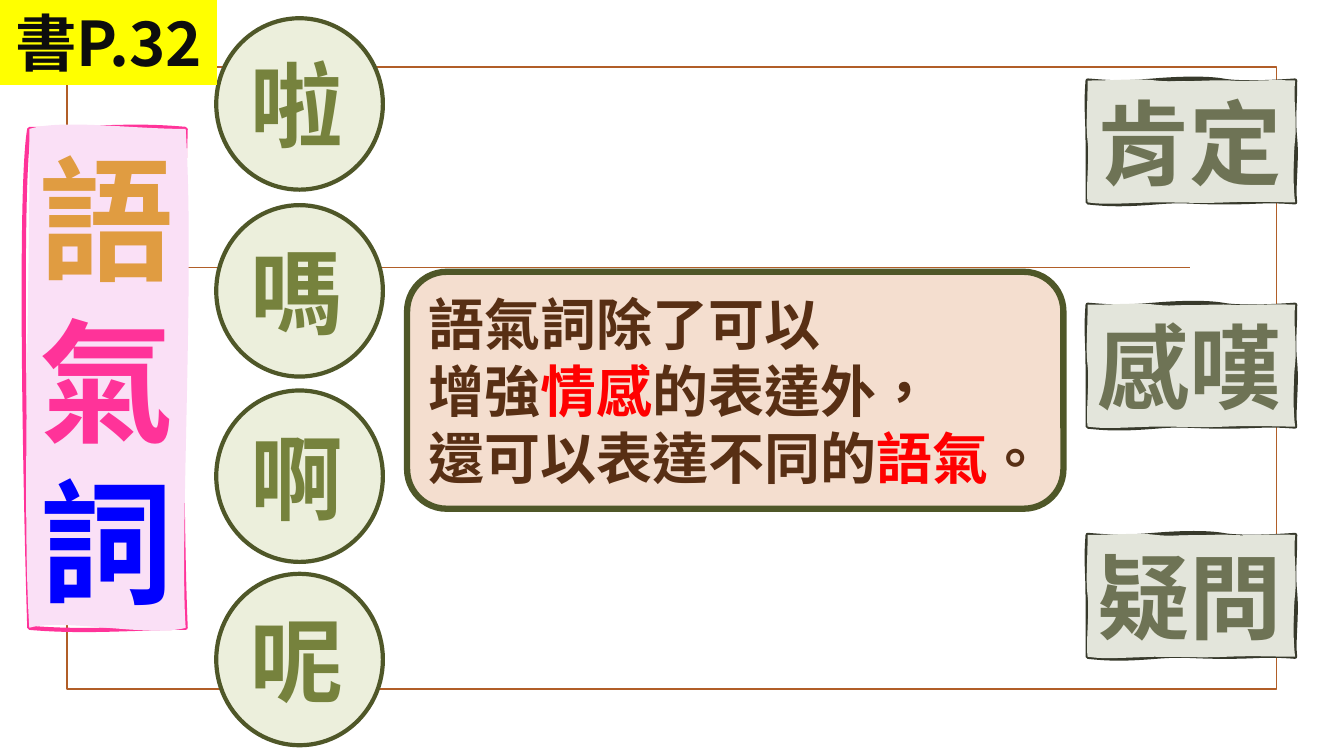
from pptx import Presentation
from pptx.dml.color import RGBColor
from pptx.enum.shapes import MSO_CONNECTOR, MSO_SHAPE
from pptx.enum.text import MSO_ANCHOR, PP_ALIGN
from pptx.oxml.ns import qn
from pptx.util import Cm, Pt
from lxml import etree

BANNER = [[("語", "ochre")], [("氣", "pink")], [("詞", "blue")]]
PARTICLES = [("啦", 0.46), ("嗎", 5.17), ("啊", 9.84), ("呢", 14.46)]
MOODS = [("肯定", 2.03), ("感嘆", 7.68), ("疑問", 13.48)]
CALLOUT = [
    [("語氣詞除了可以", "brown"), None,
     ("增強", "brown"), ("情感", "red"), ("的表達外，", "brown")],
    [("還可以表達不同的", "brown"), ("語氣", "red"), ("。", "brown")],
]
PAGE = [[("書P.32", "ink")]]

THEME = {
    "font": "Noto Sans CJK SC",
    "size": {"banner": 96, "tag": 66, "page": 44, "callout": 40},
    "color": {
        "rust": "B15E28", "ochre": "E09C41", "pink": "FF3399", "blue": "0000FF",
        "blush": "FAE0F6", "mist": "E3E5DB", "charcoal": "37392B", "sage": "6E7355",
        "lime": "ECEFDC", "moss": "4F5728", "olive": "76823D", "peach": "F4DECF",
        "brown": "582F14", "red": "FF0000", "yellow": "FFFF00", "ink": "0D0D0D",
    },
}

BANNER_EDGE = [
    ((.46, 0), (.64, -.01), (1, 0)), ((.96, .44), (.98, .86), (1, 1)),
    ((.68, 1), (.36, 1.01), (0, 1)), ((-.02, .81), (-.07, .12), (0, 0)),
]
BANNER_PAPER = [
    ((.21, -.02), (.65, 0), (1, 0)), ((1.06, .29), (.96, .82), (1, 1)),
    ((.78, 1.02), (.21, .98), (0, 1)), ((-.05, .77), (.01, .21), (0, 0)),
]
MOOD_EDGE = [
    ((.14, .02), (.17, .02), (.32, 0)), ((.46, -.02), (.58, -.02), (.65, 0)),
    ((.71, .02), (.84, .02), (1, 0)), ((1, .21), (.99, .3), (1, .48)),
    ((1.01, .66), (.99, .88), (1, 1)), ((.85, .98), (.83, 1), (.66, 1)),
    ((.49, 1), (.47, .98), (.33, 1)), ((.18, 1.02), (.11, 1.02), (0, 1)),
    ((0, .81), (0, .76), (0, .52)), ((0, .28), (-.01, .23), (0, 0)),
]
MOOD_PAPER = [
    ((.14, 0), (.24, -.02), (.33, 0)), ((.43, .02), (.61, -.01), (.69, 0)),
    ((.77, .01), (.85, -.01), (1, 0)), ((.99, .17), (1.01, .31), (1, .48)),
    ((.99, .64), (.99, .88), (1, 1)), ((.9, 1), (.81, .99), (.67, 1)),
    ((.53, 1.01), (.49, 1), (.32, 1)), ((.14, 1.01), (.08, 1.02), (0, 1)),
    ((-.01, .89), (.01, .64), (0, .5)), ((-.01, .36), (0, .21), (0, 0)),
]


def rgb(key):
    return RGBColor.from_string(THEME["color"][key])


def paint(shape, fill=None, line=None, width=0):
    shape.shadow.inherit = False
    if fill:
        shape.fill.solid()
        shape.fill.fore_color.rgb = rgb(fill)
    else:
        shape.fill.background()
    if line:
        shape.line.color.rgb = rgb(line)
        shape.line.width = Pt(width)
    else:
        shape.line.fill.background()
    return shape


def write(shape, paragraphs, role, align=PP_ALIGN.LEFT, wrap=True,
          anchor=MSO_ANCHOR.MIDDLE):
    frame = shape.text_frame
    for name, value in {"word_wrap": wrap, "vertical_anchor": anchor}.items():
        setattr(frame, name, value)
    for index, pieces in enumerate(paragraphs):
        paragraph = frame.add_paragraph() if index else frame.paragraphs[0]
        paragraph.alignment = align
        for piece in pieces:
            if piece is None:
                paragraph.add_line_break()
                continue
            run = paragraph.add_run()
            run.text, color = piece
            style = {"name": THEME["font"], "size": Pt(THEME["size"][role]), "bold": True}
            for name, value in style.items():
                setattr(run.font, name, value)
            run.font.color.rgb = rgb(color)
            run.font._element.set("lang", "zh-TW")
            east_asian = etree.SubElement(run.font._element, qn("a:ea"))
            east_asian.set("typeface", THEME["font"])


def preset(kind, box, **look):
    return paint(slide.shapes.add_shape(kind, *map(Cm, box)), **look)


def add_curves(outlines, curves, width, height, **mode):
    outline = etree.SubElement(outlines, qn("a:path"), w=str(width), h=str(height), **mode)

    def add_step(tag, points):
        step = etree.SubElement(outline, qn(tag))
        for x, y in points:
            etree.SubElement(step, qn("a:pt"), x=str(round(x * width)),
                             y=str(round(y * height)))

    add_step("a:moveTo", [(0, 0)])
    for curve in curves:
        add_step("a:cubicBezTo", curve)
    add_step("a:close", [])


def card(edge, paper, box, fill, line, paragraphs, role):
    left, top, width, height = map(Cm, box)
    builder = slide.shapes.build_freeform(left, top)
    builder.add_line_segments(
        [(left + width, top), (left + width, top + height), (left, top + height)])
    shape = paint(builder.convert_to_shape(), fill=fill, line=line, width=3)
    outlines = shape._element.spPr.find(".//" + qn("a:pathLst"))
    for corner_outline in list(outlines):
        outlines.remove(corner_outline)
    add_curves(outlines, edge, width, height, fill="none")
    add_curves(outlines, paper, width, height, stroke="0")
    write(shape, paragraphs, role, wrap=False)


deck = Presentation()
deck.slide_width, deck.slide_height = Cm(33.87), Cm(19.05)
slide = deck.slides.add_slide(deck.slide_layouts[6])

preset(MSO_SHAPE.RECTANGLE, (1.69, 1.69, 30.48, 15.67), line="rust", width=1.25)
divider = slide.shapes.add_connector(
    MSO_CONNECTOR.STRAIGHT, *map(Cm, (3.89, 6.74, 30, 6.74)))
divider.line.fill.solid()
divider.line.fill.fore_color.rgb = rgb("rust")
divider.line.width = Pt(1.25)
etree.SubElement(divider._element.spPr, qn("a:effectLst"))
divider._element.remove(divider._element.find(qn("p:style")))

card(BANNER_EDGE, BANNER_PAPER, (0.74, 3.25, 3.94, 12.57),
     "blush", "pink", BANNER, "banner")
for mood, top in MOODS:
    card(MOOD_EDGE, MOOD_PAPER, (27.41, top, 5.23, 3.07),
         "mist", "charcoal", [[(mood, "sage")]], "tag")

for particle, top in PARTICLES:
    circle = preset(MSO_SHAPE.FLOWCHART_CONNECTOR, (5.45, top, 4.2, 4.32),
                    fill="lime", line="moss", width=3)
    write(circle, [[(particle, "olive")]], "tag")

callout = preset(MSO_SHAPE.ROUNDED_RECTANGLE, (10.26, 6.85, 16.54, 5.97),
                 fill="peach", line="moss", width=4.5)
write(callout, CALLOUT, "callout")

page = preset(MSO_SHAPE.RECTANGLE, (0, 0, 5.47, 2.14), fill="yellow")
write(page, PAGE, "page", align=PP_ALIGN.CENTER, anchor=MSO_ANCHOR.TOP)

deck.save("out.pptx")
